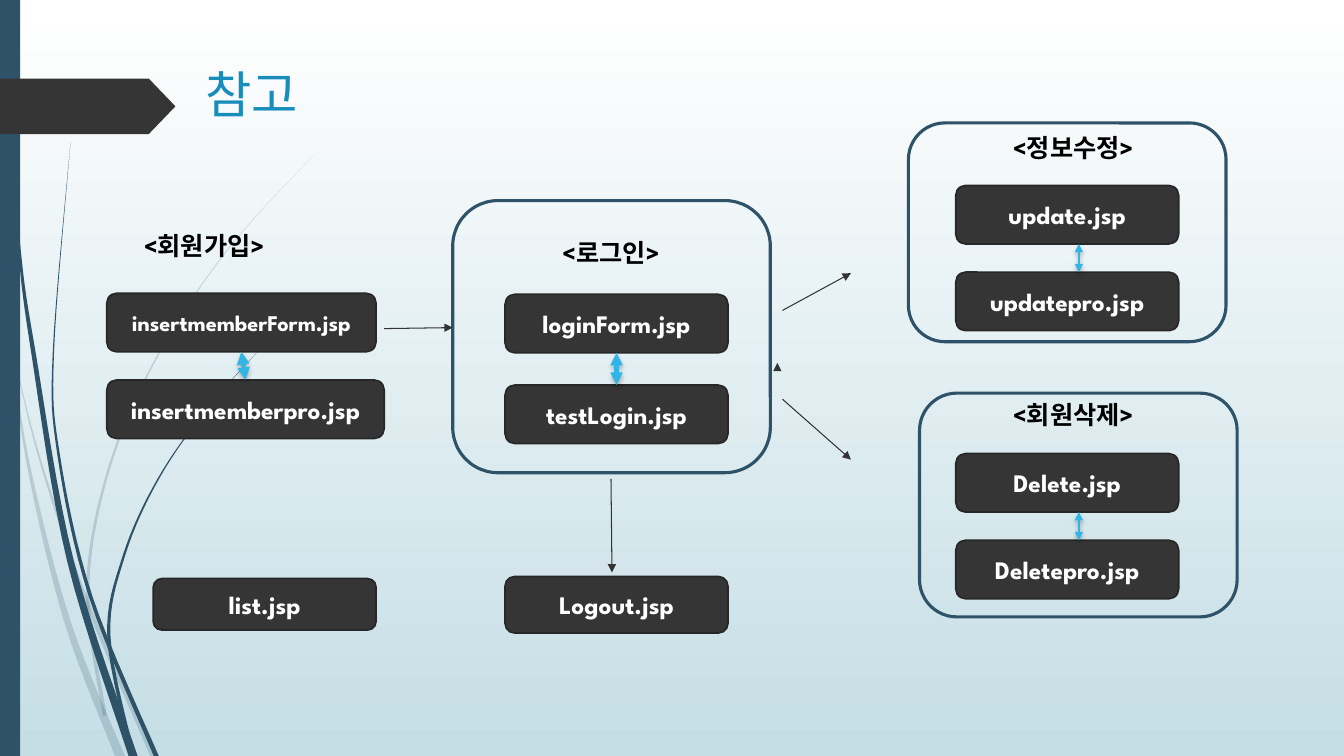
from lxml import etree
from pptx import Presentation
from pptx import util as u
from pptx.dml.color import RGBColor
from pptx.enum import shapes, text
from pptx.oxml.ns import qn

COLOURS = {"white": "FFFFFF", "mist": "C5DEE5", "navy": "2E5369", "coal": "353535",
           "edge": "272727", "sky": "31B4E6", "arrow": "333333", "black": "000000",
           "title": "178DBB"}
RGB = {name: RGBColor.from_string(value) for name, value in COLOURS.items()}
FONT = "League Spartan"
ROWS, COLUMNS = 7.5, 13.33  # one grid cell is an inch square

deck = Presentation()
deck.slide_width, deck.slide_height = u.Inches(COLUMNS), u.Inches(ROWS)
page = deck.slides.add_slide(deck.slide_layouts[6])


def grid(*lengths):
    """Turn grid columns and rows into slide lengths."""
    return [round(length * deck.slide_height / ROWS) for length in lengths]


def paint(shape, fill=None, edge=None, weight=0):
    """Give a shape a flat fill and outline; None means invisible."""
    shape.shadow.inherit = False
    if fill:
        shape.fill.solid()
        shape.fill.fore_color.rgb = RGB[fill]
    else:
        shape.fill.background()
    if edge:
        shape.line.color.rgb, shape.line.width = RGB[edge], u.Pt(weight)
    else:
        shape.line.fill.background()


# Background: white at the top, mist at the bottom
backdrop = page.background.fill
backdrop.gradient()
backdrop.gradient_angle = 270
for stop, name, position in zip(backdrop.gradient_stops, ("white", "mist"), (0, 1)):
    stop.color.rgb, stop.position = RGB[name], position

# Grass blades: opacity in percent, width at the foot, points on the centre line.
# A Catmull-Rom curve joins the points; the blade widens evenly from tip to foot.
STEPS = 8
blades = [
    (20, .06, [(0, 2.9), (.31, 4.25), (.6, 5.2), (.9, 6.07), (1.52, ROWS)]),
    (20, .1, [(.11, 3.5), (.3, 4.7), (.68, 6.2), (1.19, ROWS)]),
    (20, .04, [(3.12, 1.53), (2.28, 2.45), (1.59, 3.48), (1.09, 4.62), (.87, 5.84), (1.04, 7.1)]),
    (100, .09, [(.03, 0), (.18, 2.33), (.34, 3.55), (.7, 5.57), (1.32, ROWS)]),
    (100, .05, [(.7, 1.41), (.53, 3.49), (.58, 4.5), (.9, 5.92), (1.55, ROWS)]),
    (100, .04, [(2.6, 3.44), (2.05, 4.06), (1.57, 4.75), (1.23, 5.51), (1.08, 6.32), (1.32, ROWS)]),
]
for opacity, foot, knots in blades:
    padded = [knots[0], *knots, knots[-1]]
    centre = [knots[0]]
    for a, b, c, d in zip(padded, padded[1:], padded[2:], padded[3:]):
        for step in range(1, STEPS + 1):
            t = step / STEPS
            centre.append([(2 * q + (r - p) * t + (2 * p - 5 * q + 4 * r - s) * t ** 2
                            + (3 * q - p - 3 * r + s) * t ** 3) / 2
                           for p, q, r, s in zip(a, b, c, d)])
    half = foot / 2 / (len(centre) - 1)
    left = [grid(x - half * i, y) for i, (x, y) in enumerate(centre)]
    right = [grid(x + half * i, y) for i, (x, y) in enumerate(centre)]
    builder = page.shapes.build_freeform(*left[0])
    builder.add_line_segments(left[1:] + right[::-1], close=True)
    blade = builder.convert_to_shape()
    paint(blade, "navy")
    if opacity < 100:
        tint = blade.fill._xPr.find(qn("a:solidFill"))[0]
        etree.SubElement(tint, qn("a:alpha"), val=str(opacity * 1000))

# Side bar and the pointed tag beside the title
side_bar = page.shapes.add_shape(shapes.MSO_SHAPE.RECTANGLE, *grid(0, 0, .2, ROWS))
paint(side_bar, "navy")
tag = page.shapes.add_shape(shapes.MSO_SHAPE.PENTAGON, *grid(0, .78, 1.74, .55))
tag.adjustments[0] = .48
paint(tag, "coal")

# Panels around the login, update and delete steps
PANEL = 3.15
for left, top, height in [(4.49, 1.99, 2.7), (9.01, 1.22, 2.17), (9.12, 3.9, 2.22)]:
    panel = page.shapes.add_shape(shapes.MSO_SHAPE.ROUNDED_RECTANGLE,
                                  *grid(left, top, PANEL, height))
    paint(panel, edge="navy", weight=2.25)

# Page boxes: text, left, top, width, height
JOIN, LOGIN, MANAGE = 1.06, 5.01, 9.48
UPDATE, DELETE = 1.84, 4.5
BOX, HIGH, PITCH = 2.21, .58, .86
page_boxes = [
    ("insertmemberForm.jsp", JOIN, 2.91, 2.67, HIGH),
    ("insertmemberpro.jsp", JOIN, 2.91 + PITCH, 2.75, HIGH),
    ("loginForm.jsp", LOGIN, 2.92, BOX, HIGH),
    ("testLogin.jsp", LOGIN, 3.82, BOX, HIGH),
    ("update.jsp", MANAGE, UPDATE, BOX, HIGH),
    ("updatepro.jsp", MANAGE, UPDATE + PITCH, BOX, HIGH),
    ("Delete.jsp", MANAGE, DELETE, BOX, HIGH),
    ("Deletepro.jsp", MANAGE, DELETE + PITCH, BOX, HIGH),
    ("list.jsp", 1.52, 5.74, BOX, .51),
    ("Logout.jsp", LOGIN, 5.72, BOX, .56),
]
boxes, written = {}, []  # written: shape, words, size, colour, bold, alignment
for words, *place in page_boxes:
    box = page.shapes.add_shape(shapes.MSO_SHAPE.ROUNDED_RECTANGLE, *grid(*place))
    paint(box, "coal", "edge", 1.25)
    box.text_frame.vertical_anchor = text.MSO_ANCHOR.MIDDLE
    size = 16 if words == "insertmemberForm.jsp" else 18
    written.append((box, words, size, "white", True, text.PP_ALIGN.CENTER))
    boxes[words] = box

# Headings and title
headings = [("<회원가입>", 1.33, 2.24), ("<로그인>", 5.48, 2.31),
            ("<정보수정>", 9.95, 1.26), ("<회원삭제>", 9.95, 3.91)]
for words, left, top in headings:
    heading = page.shapes.add_textbox(*grid(left, top, BOX, .4))
    written.append((heading, words, 18, "black", True, text.PP_ALIGN.LEFT))
title = page.shapes.add_textbox(*grid(1.94, .58, 9.75, 1.1))
written.append((title, "참고", 36, "title", False, text.PP_ALIGN.LEFT))

for shape, words, size, colour, bold, alignment in written:
    shape.text_frame.word_wrap = True
    para = shape.text_frame.paragraphs[0]
    para.text, para.alignment = words, alignment
    font = para.runs[0].font
    font.name, font.size, font.bold = FONT, u.Pt(size), bold
    font.color.rgb = RGB[colour]

# Two-way links run from the bottom of a form box to the top of its partner
arrows = []  # connector, colour, weight
pairs = [("insertmemberForm.jsp", "insertmemberpro.jsp"), ("loginForm.jsp", "testLogin.jsp")]
for upper, lower in pairs:
    link = page.shapes.add_connector(shapes.MSO_CONNECTOR.STRAIGHT, 0, 0, 0, 0)
    link.begin_connect(boxes[upper], 2)
    link.end_connect(boxes[lower], 0)
    arrows.append((link, "sky", 3))
for top in (UPDATE, DELETE):  # these two stand right of the box centre
    link = page.shapes.add_connector(shapes.MSO_CONNECTOR.STRAIGHT,
                                     *grid(10.7, top + HIGH, 10.7, top + PITCH))
    arrows.append((link, "sky", 1.75))

# One-way steps between the groups: from column, row to column, row
steps = [(3.81, 3.26, 4.49, 3.25), (7.76, 3.08, 8.44, 2.71), (7.71, 3.63, 7.71, 3.6),
         (7.76, 3.96, 8.44, 4.56), (6.06, 4.75, 6.07, 5.68)]
for ends in steps:
    step_arrow = page.shapes.add_connector(shapes.MSO_CONNECTOR.STRAIGHT, *grid(*ends))
    arrows.append((step_arrow, "arrow", .75))

for arrow, colour, weight in arrows:
    arrow.line.color.rgb, arrow.line.width = RGB[colour], u.Pt(weight)
    stroke = arrow.line._get_or_add_ln()
    effects = etree.SubElement(arrow._element.spPr, qn("a:effectLst"))
    if colour == "sky":
        etree.SubElement(stroke, qn("a:headEnd"), type="triangle")
        shade = etree.SubElement(effects, qn("a:outerShdw"), blurRad=str(u.Pt(3)),
                                 dist=str(u.Pt(2)), dir="5400000", rotWithShape="0")
        tone = etree.SubElement(shade, qn("a:srgbClr"), val=COLOURS["black"])
        etree.SubElement(tone, qn("a:alpha"), val="25000")
    etree.SubElement(stroke, qn("a:tailEnd"), type="triangle")

deck.save("out.pptx")
